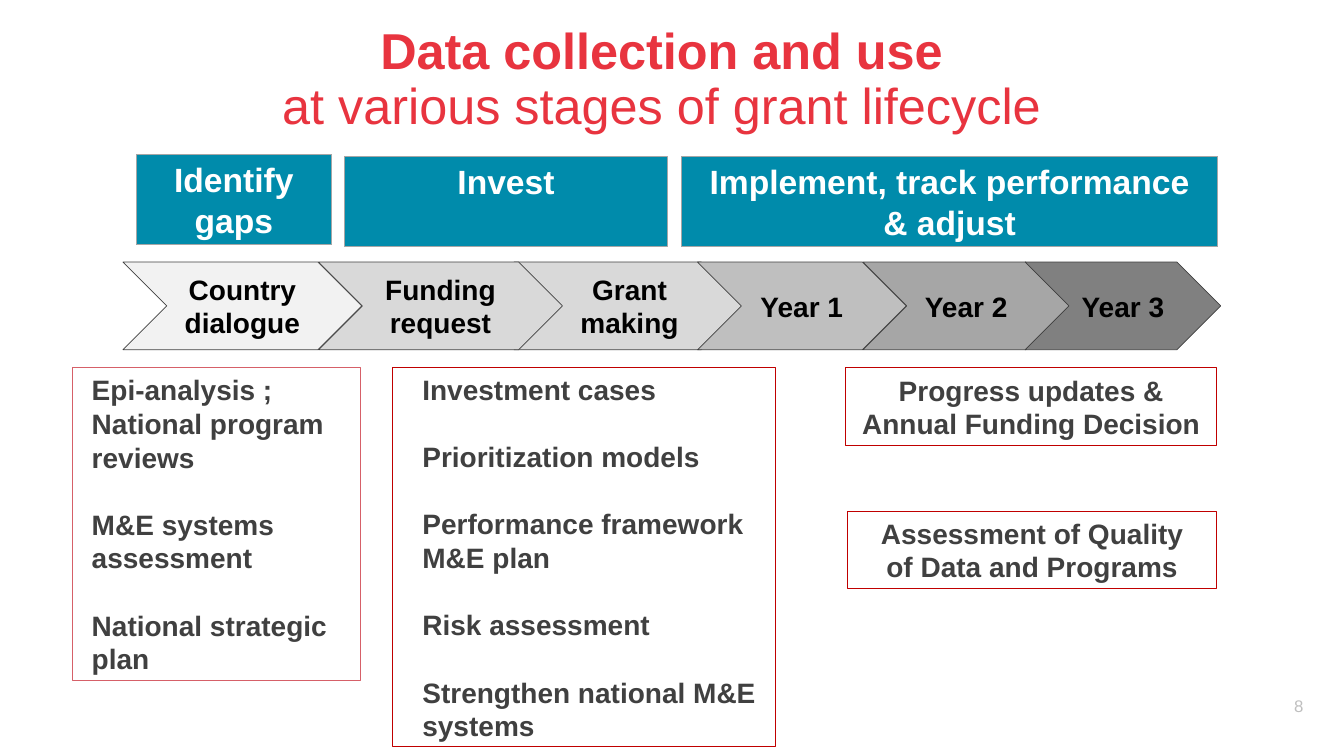
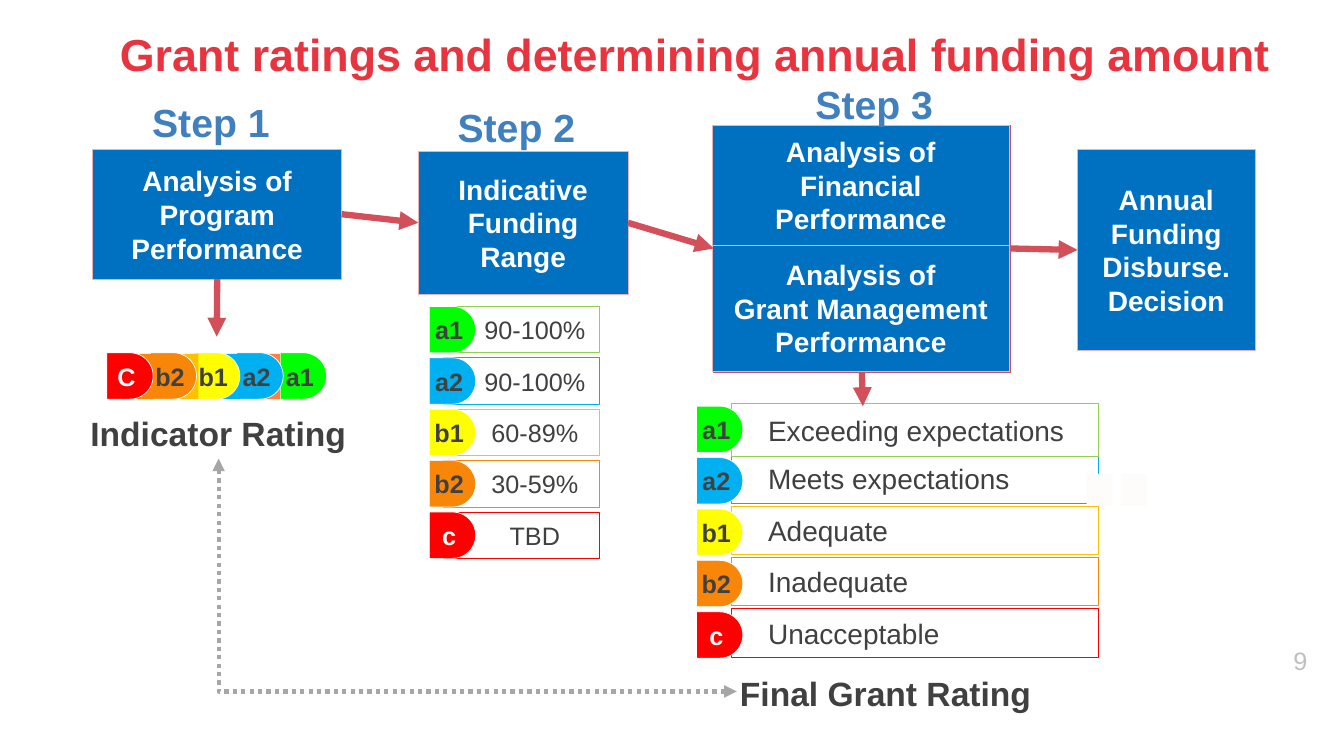
from lxml import etree
from pptx import Presentation
from pptx.dml.color import RGBColor
from pptx.enum.dml import MSO_LINE
from pptx.enum.shapes import MSO_CONNECTOR, MSO_SHAPE
from pptx.enum.text import MSO_ANCHOR, MSO_AUTO_SIZE, PP_ALIGN
from pptx.oxml.ns import qn
from pptx.util import Inches, Pt

RECT, CHEVRON, DELAY = MSO_SHAPE.RECTANGLE, MSO_SHAPE.CHEVRON, MSO_SHAPE.FLOWCHART_DELAY
LEFT, CENTER, RIGHT = PP_ALIGN.LEFT, PP_ALIGN.CENTER, PP_ALIGN.RIGHT
TOP, MIDDLE, BOTTOM = MSO_ANCHOR.TOP, MSO_ANCHOR.MIDDLE, MSO_ANCHOR.BOTTOM
STRAIGHT, ELBOW = MSO_CONNECTOR.STRAIGHT, MSO_CONNECTOR.ELBOW
SITE_LEFT, SITE_BOTTOM, SITE_RIGHT = 1, 2, 3
TITLE_ONLY = 5
FONT = "Arial"

COLORS = {
    "title": "E8343F", "step": "4080BF", "ink": "404040", "black": "000000",
    "white": "FFFFFF", "page": "BFBFBF", "teal": "008BAB", "gray": "A6A6A6",
    "crimson": "C00000", "rose": "D66068", "arrow": "D34F59",
    "blue": "0070C0", "pink": "EBB2B6", "patch": "FEFBFB", "coral": "FF7F45",
    "phase1": "F2F2F2", "phase2": "D9D9D9", "year1": "BFBFBF",
    "year2": "A6A6A6", "year3": "808080",
    "green": "00FF00", "leaf": "92D050", "sky": "00B0F0", "yellow": "FFFF00",
    "amber": "FFC000", "orange": "F78609", "red": "FF0000",
}


def rgb(name):
    return RGBColor.from_string(COLORS[name])


def cells(*counts):
    """Lengths on a grid of square cells, 0.1 inch wide and high."""
    return [Inches(count / 10) for count in counts]


class Deck:
    def __init__(self):
        self.prs = Presentation()
        self.prs.slide_width, self.prs.slide_height = cells(133.33, 75)
        self.slide = None

    def new_slide(self, title_box, title_size, *title_lines):
        """Start a slide; the first title line is bold, later ones are not."""
        self.slide = self.prs.slides.add_slide(self.prs.slide_layouts[TITLE_ONLY])
        title = self.slide.shapes.title
        title.left, title.top, title.width, title.height = cells(*title_box)
        frame = self.format_frame(title, TOP, 0, 0)
        heading = frame.paragraphs[0]
        heading.line_spacing = 0.9
        self.format_paragraph(heading, title_size, "title", False, CENTER)
        for index, line in enumerate(title_lines):
            if index:
                heading.add_line_break()
            run = heading.add_run()
            run.text = line
            run.font.bold = index == 0

    def format_frame(self, shape, anchor, inset, indent):
        frame = shape.text_frame
        frame.word_wrap = True
        frame.auto_size = MSO_AUTO_SIZE.NONE
        frame.vertical_anchor = anchor
        frame.margin_left, frame.margin_right = cells(inset + indent, inset)
        frame.margin_top, frame.margin_bottom = cells(inset / 2, inset / 2)
        return frame

    def format_paragraph(self, paragraph, size, color, bold, align):
        paragraph.alignment = align
        font = paragraph.font
        font.name, font.size, font.bold = FONT, Pt(size), bold
        font.color.rgb = rgb(color)

    def set_text(self, shape, text, size=20, color="ink", bold=True, align=CENTER,
                 anchor=MIDDLE, inset=1, indent=0, gap=0):
        frame = self.format_frame(shape, anchor, inset, indent)
        frame.text = text
        for index, paragraph in enumerate(frame.paragraphs):
            self.format_paragraph(paragraph, size, color, bold, align)
            if index and gap:
                paragraph.space_before = Pt(gap)

    def box(self, place, text="", fill=None, line=None, weight=0.5, kind=RECT, **style):
        shape = self.slide.shapes.add_shape(kind, *cells(*place))
        shape.shadow.inherit = False
        if fill:
            shape.fill.solid()
            shape.fill.fore_color.rgb = rgb(fill)
        else:
            shape.fill.background()
        if line:
            shape.line.color.rgb = rgb(line)
            shape.line.width = Pt(weight)
        else:
            shape.line.fill.background()
        if text:
            self.set_text(shape, text, **style)
        return shape

    def label(self, place, text, **style):
        self.set_text(self.slide.shapes.add_textbox(*cells(*place)), text,
                      **{"anchor": TOP, **style})

    def page_number(self, place, number, size):
        self.label(place, number, size=size, color="page", bold=False,
                   align=RIGHT, anchor=BOTTOM, inset=0)

    def badge(self, left, top, rating, fill):
        color = "white" if fill == "red" else "ink"
        self.box((left, top, 4.6, 4.6), rating, fill, "white", kind=DELAY,
                 size=18, color=color, inset=0)

    def arrow(self, start, end, kind=STRAIGHT, color="arrow", weight=4.5,
              dash=None, ends=("tailEnd",)):
        """Draw an arrow; each end is a point or a (shape, site) pair."""
        joined = [not isinstance(point[0], (int, float)) for point in (start, end)]
        points = [(0, 0) if join else point
                  for join, point in zip(joined, (start, end))]
        link = self.slide.shapes.add_connector(kind, *cells(*points[0], *points[1]))
        if joined[0]:
            link.begin_connect(*start)
        if joined[1]:
            link.end_connect(*end)
        link.line.color.rgb = rgb(color)
        link.line.width = Pt(weight)
        if dash:
            link.line.dash_style = dash
        properties = link._element.spPr
        outline = properties.find(qn("a:ln"))
        for tag in ends:
            etree.SubElement(outline, qn("a:" + tag), type="triangle")
        etree.SubElement(properties, qn("a:effectLst"))
        if kind == ELBOW:
            properties.find(qn("a:prstGeom")).set("prst", "bentConnector2")


def lifecycle_slide(deck):
    deck.new_slide((7.1, 2.6, 117.1, 7.3), 36, "Data collection and use",
                   "at various stages of grant lifecycle")
    deck.page_number((124.2, 67.8, 5.1, 3.2), "8", 12)

    stages = [
        (12.2, 23.7, "Country dialogue", "phase1"),
        (51, 22.9, "Grant making", "phase2"),
        (85.6, 20.5, "Year 2", "year2"),
        (69.2, 20.7, "Year 1", "year1"),
        (101.7, 19.4, "Year 3", "year3"),
        (31.6, 24.2, "Funding request", "phase2"),
    ]
    for left, width, stage, fill in stages:
        deck.box((left, 26, width, 8.7), stage, fill, "ink", kind=CHEVRON, color="black")

    phases = [
        (13.5, 15.3, 19.4, "Identify gaps"),
        (34.2, 15.5, 32, "Invest"),
        (67.6, 15.5, 53.2, "Implement, track performance\n& adjust"),
    ]
    for left, top, width, phase in phases:
        deck.box((left, top, width, 9), phase, "teal", "gray", 0.75,
                 size=24, color="white", anchor=TOP)

    data_uses = [
        ((7.2, 36.5, 28.6, 31), "rose", 0.9,
         "Epi-analysis ; National program reviews\nM&E systems assessment\n"
         "National strategic plan"),
        ((38.9, 36.5, 38, 37.6), "crimson", 2,
         "Investment cases\nPrioritization models\nPerformance framework\vM&E plan\n"
         "Risk assessment\nStrengthen national M&E systems"),
    ]
    for place, line, indent, uses in data_uses:
        deck.box(place, uses, line=line, weight=0.75, align=LEFT, indent=indent, gap=24)

    reviews = [
        ((83.9, 36.5, 36.8, 7.7), "Progress updates &\nAnnual Funding Decision"),
        ((84.1, 50.7, 36.6, 7.7), "Assessment of Quality\nof Data and Programs"),
    ]
    for place, review in reviews:
        deck.box(place, review, line="crimson", weight=0.75)


def ratings_slide(deck):
    deck.new_slide((4.7, 3.3, 128.6, 7.4), 32,
                   "Grant ratings and determining annual funding amount")
    deck.page_number((124.6, 63.8, 5.1, 3.2), "9", 18)

    def analysis(place, text):
        return deck.box(place, text, "blue", "pink", color="white")

    step3 = deck.box((70.8, 12.4, 29.4, 24.5), line="arrow")
    step1 = analysis((9.2, 14.8, 24.7, 12.9), "Analysis of\nProgram Performance")
    step2 = analysis((41.5, 15, 20.8, 14.2), "Indicative\nFunding Range")
    analysis((70.7, 12.4, 29.4, 11.9), "Analysis of\nFinancial Performance")
    analysis((70.7, 24.3, 29.4, 12.5), "Analysis of\nGrant Management Performance")
    decision = analysis((106.9, 14.8, 17.6, 20), "Annual Funding Disburse. Decision")

    # rating, badge colour, border colour, funding range, meaning
    scale = [
        ("a1", "green", "leaf", "90-100%", "Exceeding expectations"),
        ("a2", "sky", "sky", "90-100%", "Meets expectations"),
        ("b1", "yellow", "amber", "60-89%", "Adequate"),
        ("b2", "orange", "orange", "30-59%", "Inadequate"),
        ("c", "red", "red", "TBD", "Unacceptable"),
    ]
    row_step = 5.1
    for row, (rating, fill, border, funding, meaning) in reversed(list(enumerate(scale))):
        drop = row * row_step
        deck.box((44, 30.4 + drop, 15.5, 4.6), funding, "white", border,
                 size=18, bold=False, indent=2.6)
        deck.badge(42.6, 30.4 + drop, rating, fill)
        deck.box((72.6, 40 + drop, 36.4, 4.8 if row else 5.3), meaning, "white", border,
                 bold=False, align=LEFT, indent=2.6)
        deck.badge(69.1, 40.3 + drop, rating, fill)

    # Bands behind the overlapping badges: left, width, colour
    bands = [(25.9, 1.9, "coral"), (21.9, 1.9, "sky"), (17.1, 2.6, "amber"),
             (12.9, 2.3, "orange"), None]
    for place, ((rating, fill, *_), band) in enumerate(zip(scale, bands)):
        deck.badge(27.8 - 4.3 * place, 35, rating if band else "C", fill)
        if band:
            left, width, color = band
            deck.box((left, 35.1, width, 4.5), fill=color)

    deck.label((7.7, 40.5, 27.9, 5), "Indicator Rating", size=24)
    deck.label((72.1, 66.3, 31.5, 5), "Final Grant Rating", size=24)

    deck.arrow((step1, SITE_BOTTOM), (21.5, 33.4))
    deck.arrow((step3, SITE_BOTTOM), (85.6, 40.3))
    deck.arrow((step1, SITE_RIGHT), (step2, SITE_LEFT))
    deck.arrow((step2, SITE_RIGHT), (step3, SITE_LEFT))
    deck.arrow((step3, SITE_RIGHT), (decision, SITE_LEFT))
    deck.arrow((73.1, 68.6), (21.7, 45.5), ELBOW, "gray", 3, MSO_LINE.ROUND_DOT,
               ("headEnd", "tailEnd"))

    for left in (107.8, 111.2):
        deck.box((left, 47, 2.6, 3.2), fill="patch")
    for number, (left, top) in enumerate([(15.1, 9.8), (45.4, 10.3), (80.9, 8)], 1):
        deck.label((left, top, 17, 4.7), f"Step {number}", size=28, color="step",
                   align=LEFT, inset=0)


def main():
    deck = Deck()
    lifecycle_slide(deck)
    ratings_slide(deck)
    deck.prs.save("out.pptx")


if __name__ == "__main__":
    main()
